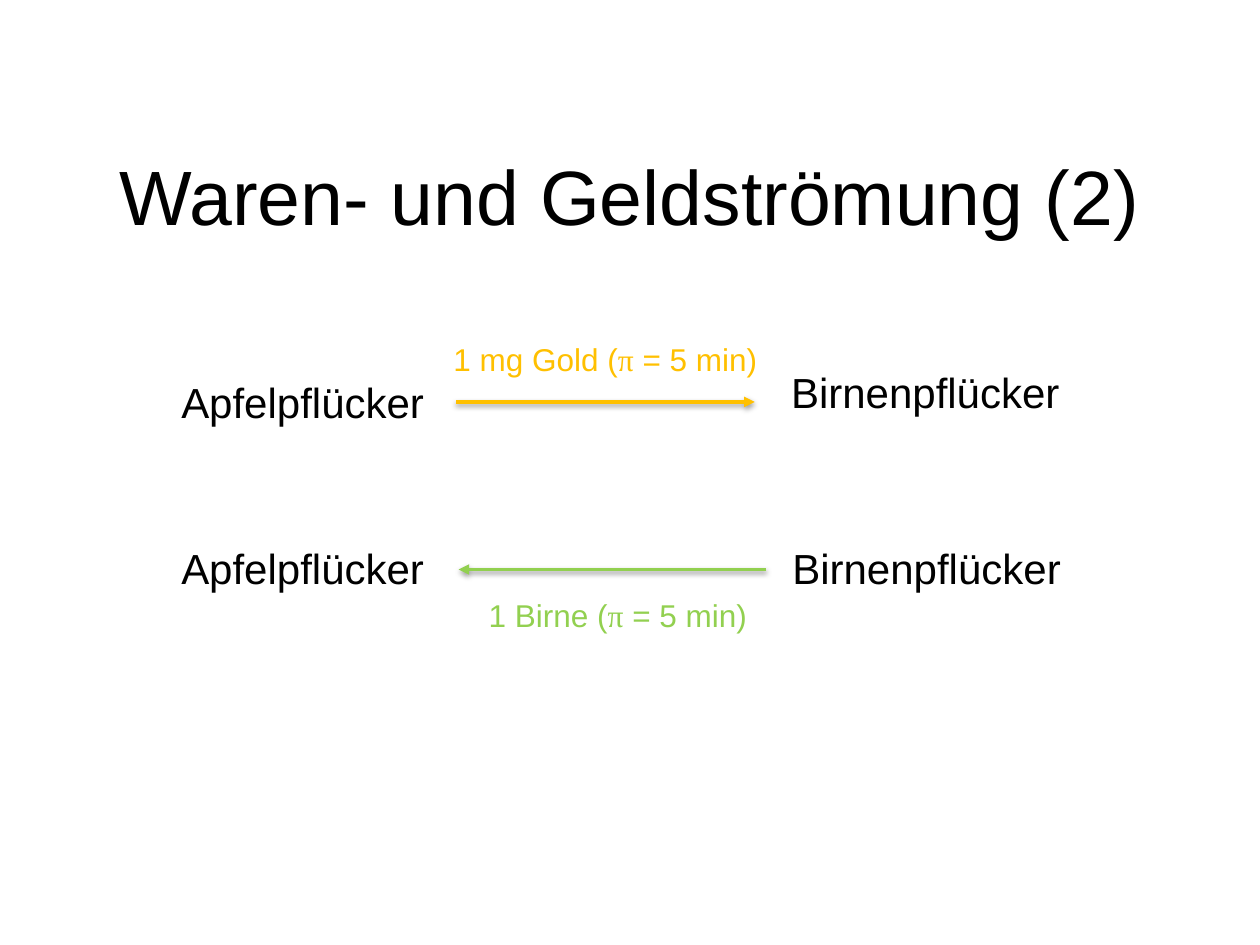
from lxml import etree
from pptx import Presentation
from pptx import util as u
from pptx.dml.color import RGBColor
from pptx.enum import shapes, text
from pptx.oxml import parse_xml
from pptx.oxml.ns import nsdecls, qn

BLACK, GOLD, GREEN = "000000", "FFC000", "92D050"


def paint(color_format, value):
    """Apply a hex colour to a colour format."""
    color_format.rgb = RGBColor.from_string(value)


def style_run(span, size, color, font="Arial"):
    """Set size, colour and font of a run."""
    span.font.size = u.Pt(size)
    span.font.name = font
    paint(span.font.color, color)


def add_title(page, box, words):
    """Place the title placeholder in the given box."""
    title = page.shapes.title
    title.left, title.top, title.width, title.height = map(u.Inches, box)
    frame = title.text_frame
    frame.text = words
    frame.vertical_anchor = text.MSO_ANCHOR.MIDDLE
    para = frame.paragraphs[0]
    para.alignment = text.PP_ALIGN.CENTER
    style_run(para.runs[0], 44, BLACK)


def add_label(page, box, words, size, color):
    """Place one line of text, with Greek pi in a serif font."""
    frame = page.shapes.add_textbox(*map(u.Inches, box)).text_frame
    frame.word_wrap = False
    frame.auto_size = text.MSO_AUTO_SIZE.SHAPE_TO_FIT_TEXT
    before, symbol, after = words.partition("π")
    for part in filter(None, (before, symbol, after)):
        span = frame.paragraphs[0].add_run()
        span.text = part
        style_run(span, size, color, "Times New Roman" if part == "π" else "Arial")


def add_arrow(page, start, end, y, color):
    """Draw a horizontal arrow with a soft shadow."""
    arrow = page.shapes.add_connector(
        shapes.MSO_CONNECTOR.STRAIGHT, *map(u.Inches, (start, y, end, y)))
    arrow.line.width = u.Pt(2)
    paint_line = arrow.line.fill
    paint_line.solid()
    paint(paint_line.fore_color, color)
    etree.SubElement(arrow.line._get_or_add_ln(), qn("a:tailEnd"), type="triangle")
    arrow._element.spPr.append(parse_xml(
        f'<a:effectLst {nsdecls("a")}><a:outerShdw blurRad="{u.Pt(3.1)}" '
        f'dist="{u.Pt(1.6)}" dir="5400000" rotWithShape="0"><a:srgbClr val="{BLACK}">'
        '<a:alpha val="38000"/></a:srgbClr></a:outerShdw></a:effectLst>'))


def add_flow(page, left_box, right_box, arrow, note_box, note, color):
    """Place two pickers, the arrow between them and its note."""
    add_label(page, left_box, "Apfelpflücker", 24, BLACK)
    add_label(page, right_box, "Birnenpflücker", 24, BLACK)
    add_arrow(page, *arrow, color)
    add_label(page, note_box, note, 18, color)


def main():
    """Build the slide and save it."""
    deck = Presentation()
    deck.slide_width, deck.slide_height = u.Inches(10), u.Inches(7.5)
    page = deck.slides.add_slide(deck.slide_layouts[5])
    add_title(page, (0.5, 0.92, 9, 1.25), "Waren- und Geldströmung (2)")
    add_flow(page, (1.34, 2.94, 2.15, 0.5), (6.18, 2.86, 2.36, 0.5),
             (3.62, 5.99, 3.19), (3.5, 2.65, 2.64, 0.4),
             "1 mg Gold (π = 5 min)", GOLD)
    add_flow(page, (1.34, 4.26, 2.15, 0.5), (6.19, 4.26, 2.36, 0.5),
             (6.08, 3.64, 4.52), (3.78, 4.68, 2.32, 0.4),
             "1 Birne (π = 5 min)", GREEN)
    deck.save("out.pptx")


if __name__ == "__main__":
    main()
